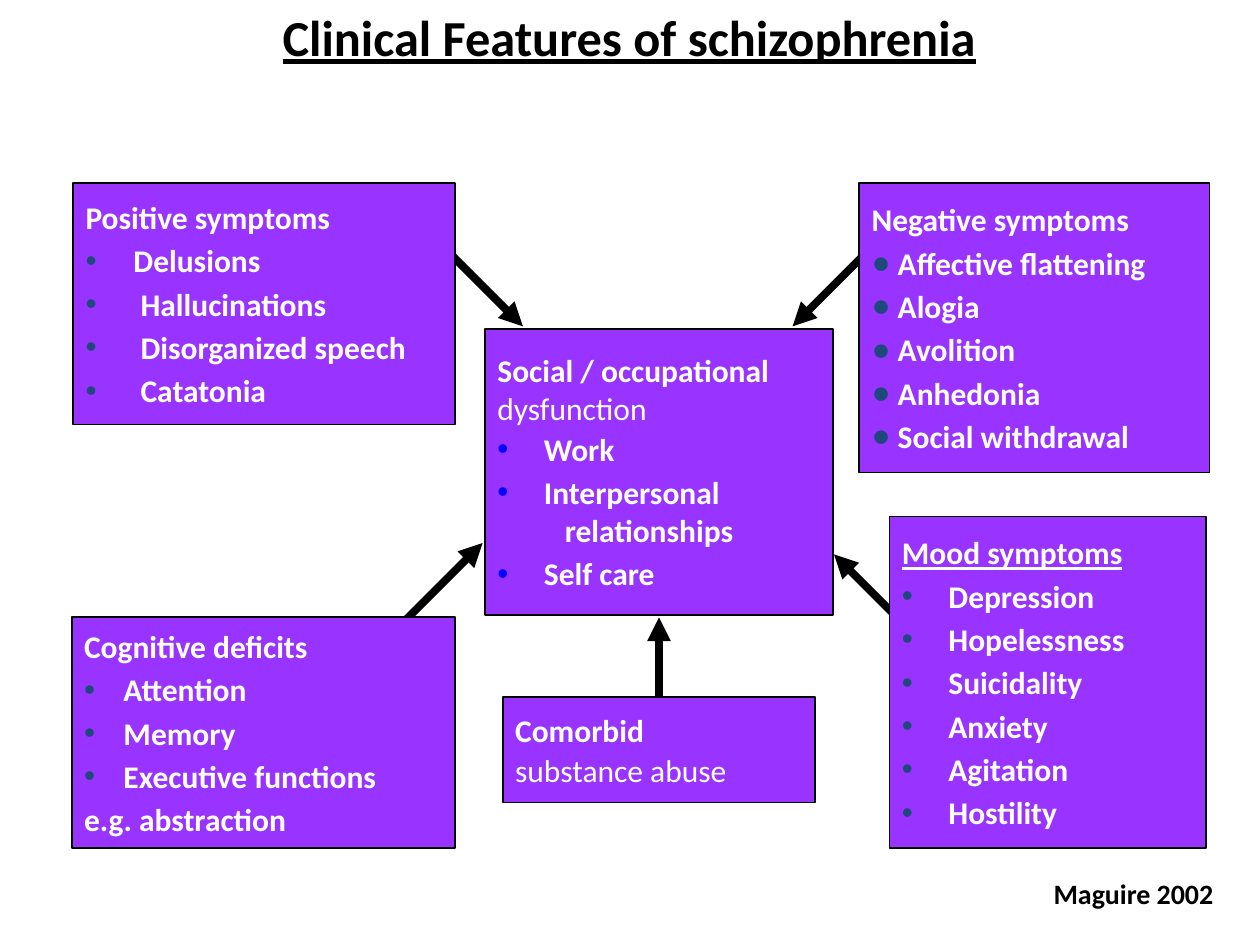
from lxml import etree
from pptx import Presentation
from pptx.dml.color import RGBColor
from pptx.enum.shapes import MSO_CONNECTOR, MSO_SHAPE
from pptx.enum.text import MSO_ANCHOR, MSO_AUTO_SIZE, PP_ALIGN
from pptx.oxml.ns import qn
from pptx.util import Pt

RECT = MSO_SHAPE.RECTANGLE
LINE = MSO_CONNECTOR.STRAIGHT
MIDDLE = MSO_ANCHOR.MIDDLE
GROW = MSO_AUTO_SIZE.SHAPE_TO_FIT_TEXT
CENTER, RIGHT = PP_ALIGN.CENTER, PP_ALIGN.RIGHT

BLACK = RGBColor(0x00, 0x00, 0x00)
WHITE = RGBColor(0xFF, 0xFF, 0xFF)
PURPLE = RGBColor(0x99, 0x33, 0xFF)
NAVY = RGBColor(0x1F, 0x49, 0x7D)
BLUE = RGBColor(0x00, 0x00, 0xFF)


class Deck:
    """Holds the style and the current slide."""

    font = "Calibri"
    size = 18
    gap = 1.6
    indent = 22.5

    def __init__(self):
        self.prs = Presentation()
        self.prs.slide_width, self.prs.slide_height = Pt(720), Pt(540)
        self.slide = self.prs.slides.add_slide(self.prs.slide_layouts[5])

    def style(self, para, size, color, under=False):
        for run in para.runs:
            font = run.font
            font.name, font.size, font.bold = self.font, Pt(size), True
            font.underline = under
            font.color.rgb = color

    def title(self, text, place):
        shape = self.slide.shapes.title
        shape.left, shape.top, shape.width, shape.height = map(Pt, place)
        frame = shape.text_frame
        frame.text = text
        frame.vertical_anchor = MIDDLE
        para = frame.paragraphs[0]
        para.alignment = CENTER
        self.style(para, 28.8, BLACK, True)

    def note(self, text, place):
        frame = self.slide.shapes.add_textbox(*map(Pt, place)).text_frame
        frame.word_wrap = True
        frame.auto_size = GROW
        frame.text = text
        para = frame.paragraphs[0]
        para.alignment = RIGHT
        self.style(para, 16, BLACK)

    def arrow(self, *ends):
        line = self.slide.shapes.add_connector(LINE, *map(Pt, ends))
        line.line.color.rgb = BLACK
        line.line.width = Pt(4.5)
        etree.SubElement(line.line._get_or_add_ln(), qn("a:tailEnd"), type="triangle")
        etree.SubElement(line._element.spPr, qn("a:effectLst"))

    def box(self, head, place, under=False, after=gap):
        shape = self.slide.shapes.add_shape(RECT, *map(Pt, place))
        shape.shadow.inherit = False
        shape.fill.solid()
        shape.fill.fore_color.rgb = PURPLE
        shape.line.color.rgb = BLACK
        shape.line.width = Pt(1)
        frame = shape.text_frame
        frame.word_wrap = False
        frame.vertical_anchor = MIDDLE
        frame.text = head
        para = frame.paragraphs[0]
        para.alignment = PP_ALIGN.LEFT
        para.space_after = Pt(after)
        self.style(para, self.size, WHITE, under)
        return frame

    def para(self, frame, text, before=gap, after=gap):
        para = frame.add_paragraph()
        para.text = text
        para.alignment = PP_ALIGN.LEFT
        para.space_before, para.space_after = Pt(before), Pt(after)
        self.style(para, self.size, WHITE)
        return para

    def item(self, frame, text, indent=indent, mark="•", color=NAVY, after=gap):
        props = self.para(frame, text, after=after)._p.get_or_add_pPr()
        props.set("marL", str(Pt(indent)))
        props.set("indent", str(-Pt(indent)))
        tint = etree.SubElement(props, qn("a:buClr"))
        etree.SubElement(tint, qn("a:srgbClr"), val=str(color))
        etree.SubElement(props, qn("a:buFont"), typeface="Arial")
        etree.SubElement(props, qn("a:buChar"), char=mark)

    def items(self, frame, texts, **look):
        for text in texts:
            self.item(frame, text, **look)


def main():
    deck = Deck()
    deck.title("Clinical Features of schizophrenia", (0, 0, 719.3, 41.8))
    for ends in (
        (226.8, 359.3, 275.8, 310.3),
        (254.9, 142.6, 298.8, 186.5),
        (496.8, 142.6, 452.9, 186.5),
        (519.8, 360, 476.6, 316.8),
        (376.6, 398.2, 376.6, 352.8),
    ):
        deck.arrow(*ends)

    social = deck.box("Social / occupational\ndysfunction",
                      (277.2, 187.9, 198.7, 163.4), after=0)
    deck.item(social, " Work", color=BLUE)
    deck.item(social, " Interpersonal", color=BLUE, after=0)
    rest = deck.para(social, "relationships", before=0)
    rest._p.get_or_add_pPr().set("marL", str(Pt(38.5)))
    deck.item(social, " Self care", color=BLUE)

    mood = deck.box("Mood symptoms", (508.3, 295.2, 180.7, 189.4), under=True)
    deck.items(mood, (" Depression", " Hopelessness", " Suicidality",
                      " Anxiety", " Agitation", " Hostility"))

    deck.box("Comorbid\nsubstance abuse", (287.3, 398.2, 178.6, 60.5))

    mind = deck.box("Cognitive deficits", (41, 352.8, 218.9, 131.8))
    deck.items(mind, ("Attention", "Memory", "Executive functions"))
    deck.para(mind, "e.g. abstraction")

    minus = deck.box("Negative symptoms", (491, 104.4, 200.2, 165.6))
    deck.items(minus, (" Affective flattening", " Alogia", " Avolition",
                       " Anhedonia", " Social withdrawal"), indent=0, mark="●")

    plus = deck.box("Positive symptoms", (41.8, 104.4, 218.2, 138.2))
    deck.items(plus, ("Delusions", " Hallucinations", " Disorganized speech",
                      " Catatonia"), indent=27.4)

    deck.note("Maguire 2002", (293, 497.5, 407.5, 26.6))
    deck.prs.save("out.pptx")


if __name__ == "__main__":
    main()
